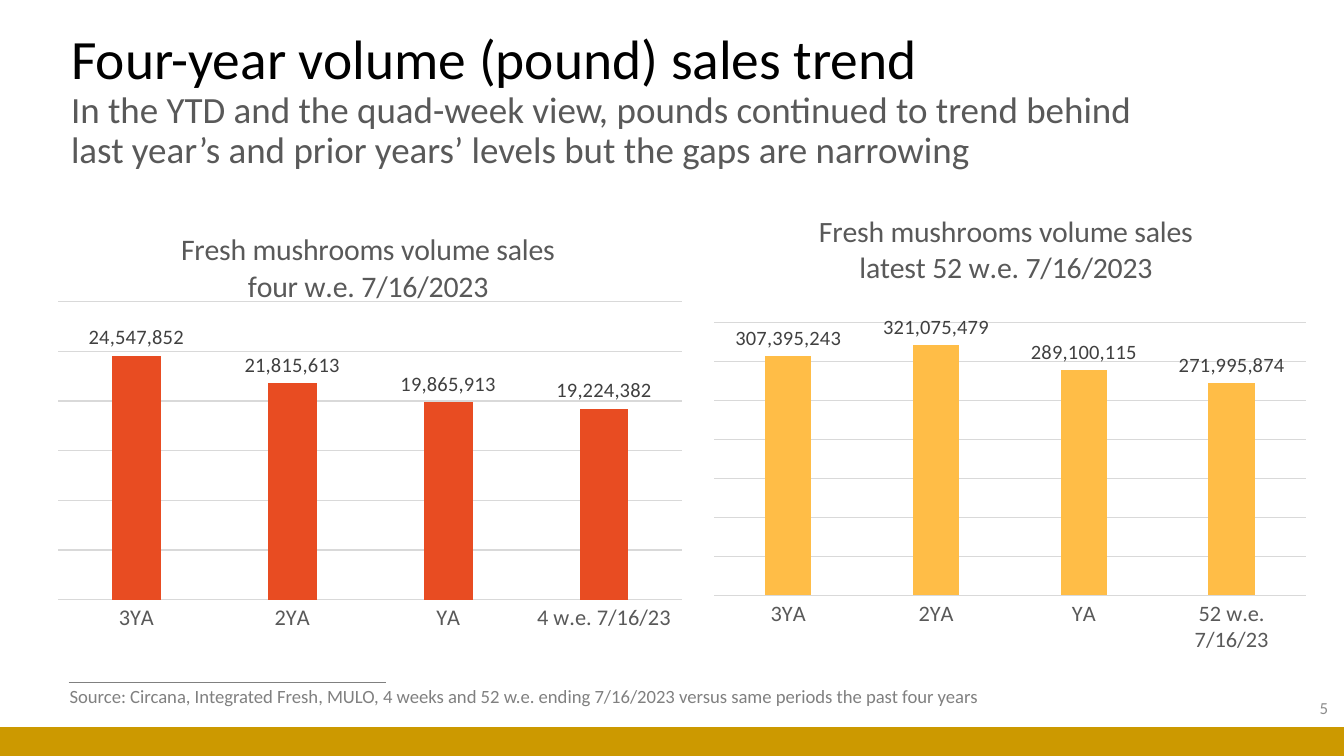
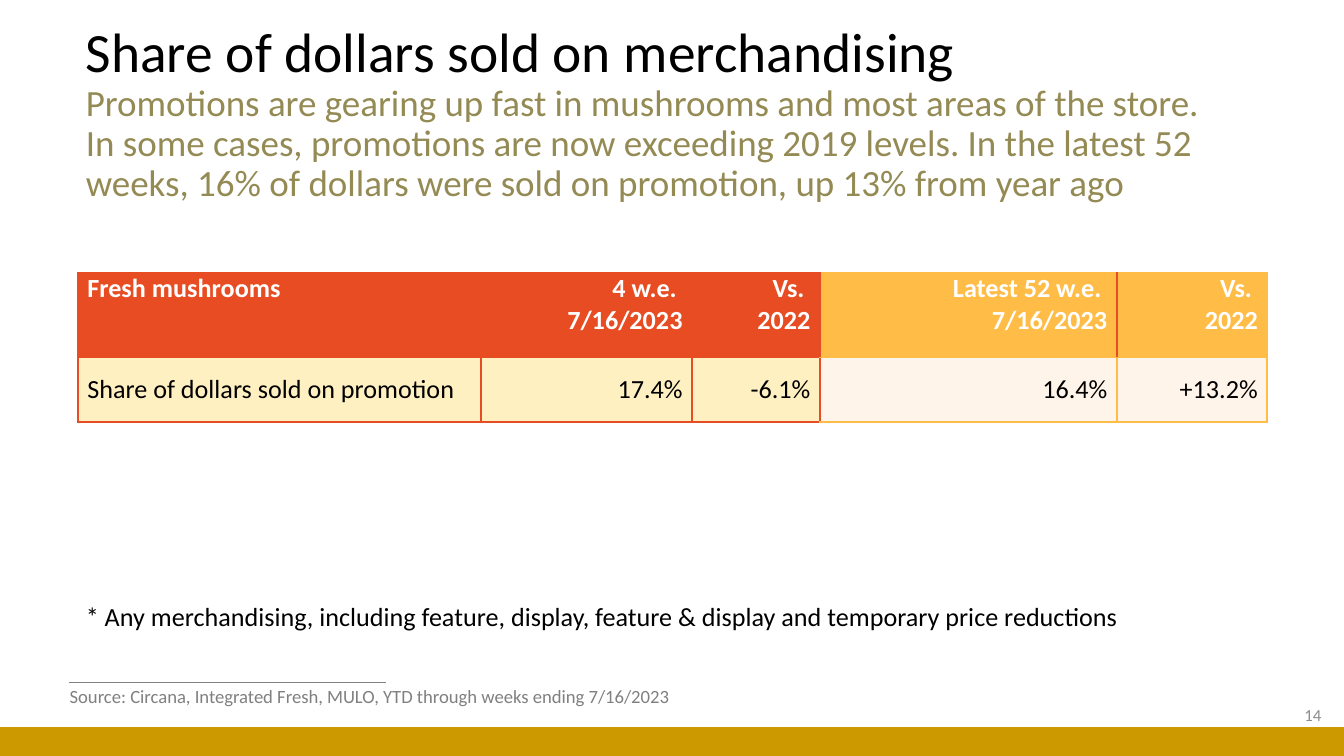
from dataclasses import dataclass

from lxml.etree import SubElement, Element
from pptx import Presentation
from pptx.chart.data import CategoryChartData
from pptx.dml.color import RGBColor
from pptx.enum.chart import XL_CHART_TYPE as Kind
from pptx.enum.chart import XL_LABEL_POSITION as Spot
from pptx.enum.chart import XL_TICK_LABEL_POSITION as Tag
from pptx.enum.chart import XL_TICK_MARK as Tick
from pptx.enum.shapes import MSO_CONNECTOR as Link
from pptx.enum.shapes import MSO_SHAPE as Form
from pptx.enum.text import MSO_ANCHOR as Anchor
from pptx.enum.text import MSO_AUTO_SIZE as Fit
from pptx.enum.text import PP_ALIGN as Align
from pptx.oxml.ns import qn
from pptx.util import Inches, Pt

FONT = "Calibri"
BLACK, WHITE = "000000", "FFFFFF"
RED, GOLD, BAND = "E84C22", "FFBD47", "CC9900"
GREY, DARK, PALE = "808080", "595959", "D9D9D9"
COMMA = "#,##0"
COLS = (3, 1.57, 0.95, 2.21, 1.12)
ROWS = (0.63, 0.48)
SPLIT = 3

Box = tuple[float, float, float, float]


@dataclass
class Page:
    """The title, source line and number of a slide."""
    title: str
    lead: str
    tone: str
    box: Box
    source: str
    wide: float
    num: str
    spot: tuple[float, float]


@dataclass
class Graph:
    """A column chart with its places as shares of the frame."""
    box: Box
    title: str
    spot: tuple[float, float]
    plot: tuple[float, float]
    last: str
    vals: tuple[int, ...]
    top: int
    step: int
    fill: str


PAGES = (
    Page("Four-year volume (pound) sales trend",
         "In the YTD and the quad-week view, pounds continued to trend behind "
         "last year’s and prior years’ levels but the gaps are narrowing",
         DARK, (0.43, 0.36, 8.35, 0.79),
         "Source: Circana, Integrated Fresh, MULO, 4 weeks and 52 w.e. ending "
         "7/16/2023 versus same periods the past four years",
         7.1, "5", (7.73, 5.12)),
    Page("Share of dollars sold on merchandising",
         "Promotions are gearing up fast in mushrooms and most areas of the "
         "store. In some cases, promotions are now exceeding 2019 levels. In "
         "the latest 52 weeks, 16% of dollars were sold on promotion, up 13% "
         "from year ago",
         "948A54", (0.54, 0.31, 8.55, 1.09),
         "Source: Circana, Integrated Fresh, MULO, YTD through weeks ending "
         "7/16/2023",
         4.81, "14", (7.68, 5.17)),
)

GRAPHS = (
    Graph((0.43, 1.55, 4.65, 3.31),
          "Fresh mushrooms volume sales\nfour w.e. 7/16/2023",
          (0.19, 0.04), (0.21, 0.67), "4 w.e. 7/16/23",
          (24547852, 21815613, 19865913, 19224382),
          30_000_000, 5_000_000, RED),
    Graph((5.31, 1.55, 4.41, 3.31),
          "Fresh mushrooms volume sales\nlatest 52 w.e. 7/16/2023",
          (0.17, 0), (0.26, 0.62), "52 w.e. 7/16/23",
          (307395243, 321075479, 289100115, 271995874),
          350_000_000, 50_000_000, GOLD),
)

CELLS = (
    ("Fresh mushrooms", "4 w.e. \n7/16/2023", "Vs. \n2022",
     " Latest 52 w.e. \n7/16/2023", "Vs. \n2022"),
    ("Share of dollars sold on promotion", "17.4%", "-6.1%", "16.4%",
     "+13.2%"),
)
FILLS = ((RED, GOLD), ("FFF0C2", "FFF4E9"))


def tint(hue: str) -> RGBColor:
    """Turn a hex string into a colour."""
    return RGBColor.from_string(hue)


def style(font, size: float, hue: str, bold: bool = False) -> None:
    """Set face, size, colour and weight."""
    font.name, font.size, font.bold = FONT, Pt(size), bold
    font.color.rgb = tint(hue)


def paint(shape, hue: str) -> None:
    """Fill a shape and drop its line."""
    shape.fill.solid()
    shape.fill.fore_color.rgb = tint(hue)
    shape.line.fill.background()
    shape.shadow.inherit = False


def write(slide, box: Box, text: str, size: float, hue: str,
          wrap: bool = False, side=Align.LEFT, anchor=Anchor.TOP):
    """Add a text box and return its first paragraph."""
    frame = slide.shapes.add_textbox(*map(Inches, box)).text_frame
    frame.word_wrap = wrap
    frame.auto_size = Fit.NONE if wrap else Fit.SHAPE_TO_FIT_TEXT
    frame.vertical_anchor = anchor
    para = frame.paragraphs[0]
    para.text, para.alignment = text, side
    for run in para.runs:
        style(run.font, size, hue)
    return para


def start(deck, page: Page):
    """Add a slide with the parts all slides share."""
    slide = deck.slides.add_slide(deck.slide_layouts[6])
    rule = slide.shapes.add_connector(
        Link.STRAIGHT, Inches(0.51), Inches(5.08), Inches(2.87), Inches(5.08))
    rule.line.color.rgb, rule.line.width = tint(GREY), Pt(0.5)
    SubElement(rule._element.spPr, qn("a:effectLst"))
    top = Inches(5.41)
    band = slide.shapes.add_shape(
        Form.RECTANGLE, 0, top, deck.slide_width, deck.slide_height - top)
    paint(band, BAND)
    head = write(slide, page.box, f"{page.title}\v{page.lead}", 29.7, BLACK,
                 True, anchor=Anchor.MIDDLE)
    head.line_spacing = 0.9
    style(head.runs[1].font, 19.8, page.tone)
    write(slide, (*page.spot, 2.25, 0.3), page.num, 9, "8C8C8C", True,
          Align.RIGHT, Anchor.MIDDLE)
    write(slide, (0.42, 5.05, page.wide, 0.27), page.source, 10, GREY)
    return slide


def place(node, index: int, **parts) -> None:
    """Give a chart part a fixed layout."""
    for old in node.findall(qn("c:layout")):
        node.remove(old)
    lay = Element(qn("c:layout"))
    node.insert(index, lay)
    man = SubElement(lay, qn("c:manualLayout"))
    for name, val in parts.items():
        SubElement(man, qn(f"c:{name}")).set("val", str(val))


def plot(slide, item: Graph) -> None:
    """Draw a column chart."""
    data = CategoryChartData(number_format=COMMA)
    data.categories = ("3YA", "2YA", "YA", item.last)
    data.add_series("Series 1", item.vals)
    chart = slide.shapes.add_chart(
        Kind.COLUMN_CLUSTERED, *map(Inches, item.box), data).chart
    style(chart.font, 10, BLACK)
    chart.has_legend = False

    chart.has_title = True
    title = chart.chart_title
    title.text_frame.text = item.title
    for para in title.text_frame.paragraphs:
        style(para.runs[0].font, 16, DARK)
    left, top = item.spot
    place(title._element, 1, xMode="edge", yMode="edge", x=left, y=top)
    top, high = item.plot
    area = chart._chartSpace.find(f".//{qn('c:plotArea')}")
    place(area, 0, layoutTarget="inner", xMode="edge", yMode="edge",
          x=0, y=top, w=1, h=high)

    base = chart.category_axis
    base.major_tick_mark = base.minor_tick_mark = Tick.NONE
    base.tick_label_position = Tag.NEXT_TO_AXIS
    style(base.tick_labels.font, 12, DARK)
    axis = chart.value_axis
    axis.visible = False
    axis.major_tick_mark = axis.minor_tick_mark = Tick.NONE
    axis.minimum_scale, axis.maximum_scale = 0, item.top
    axis.major_unit = item.step
    axis.has_major_gridlines = True
    for line in (base.format.line, axis.major_gridlines.format.line):
        line.color.rgb, line.width = tint(PALE), Pt(0.75)

    bars = chart.plots[0]
    bars.gap_width, bars.overlap = 219, -27
    bars.vary_by_categories = False
    fill = bars.series[0].format.fill
    fill.solid()
    fill.fore_color.rgb = tint(item.fill)
    bars.has_data_labels = True
    marks = bars.data_labels
    marks.show_value, marks.position = True, Spot.OUTSIDE_END
    marks.number_format, marks.number_format_is_linked = COMMA, False
    style(marks.font, 11, "404040")


def edge(cell, **hues: str) -> None:
    """Draw the four borders of a cell."""
    props = cell._tc.get_or_add_tcPr()
    for side, hue in hues.items():
        line = SubElement(props, qn(f"a:ln{side}"), w=str(Pt(1)))
        fill = SubElement(line, qn("a:solidFill"))
        SubElement(fill, qn("a:srgbClr"), val=hue)


def grid(slide) -> None:
    """Draw the promotion table."""
    table = slide.shapes.add_table(
        len(ROWS), len(COLS), Inches(0.58), Inches(2.03),
        Inches(sum(COLS)), Inches(sum(ROWS))).table
    for col, wide in zip(table.columns, COLS):
        col.width = Inches(wide)
    for row, high in zip(table.rows, ROWS):
        row.height = Inches(high)
    for i, line in enumerate(CELLS):
        head = i == 0
        for j, text in enumerate(line):
            cell = table.cell(i, j)
            late = j >= SPLIT
            hue = GOLD if late else RED
            left = RED if j == SPLIT or head else hue
            right = RED if head and j == SPLIT else hue
            edge(cell, L=left, R=right, T=hue, B=hue)
            cell.fill.solid()
            cell.fill.fore_color.rgb = tint(FILLS[i][late])
            cell.margin_left = cell.margin_right = Inches(0.07)
            cell.margin_top = cell.margin_bottom = 0
            cell.vertical_anchor = Anchor.TOP if head else Anchor.MIDDLE
            cell.text_frame.text = text
            for para in cell.text_frame.paragraphs:
                para.alignment = Align.RIGHT if j else Align.LEFT
                style(para.runs[0].font, 14, WHITE if head else BLACK, head)


def main() -> None:
    """Build both slides and save them."""
    deck = Presentation()
    deck.slide_width = Inches(10)
    deck.slide_height = deck.slide_width * 9 // 16
    trend, share = (start(deck, page) for page in PAGES)
    for item in GRAPHS:
        plot(trend, item)
    write(share, (0.54, 4.42, 8.1, 0.34),
          "* Any merchandising, including feature, display, feature & display "
          "and temporary price reductions", 14, BLACK)
    grid(share)
    deck.save("out.pptx")


if __name__ == "__main__":
    main()
